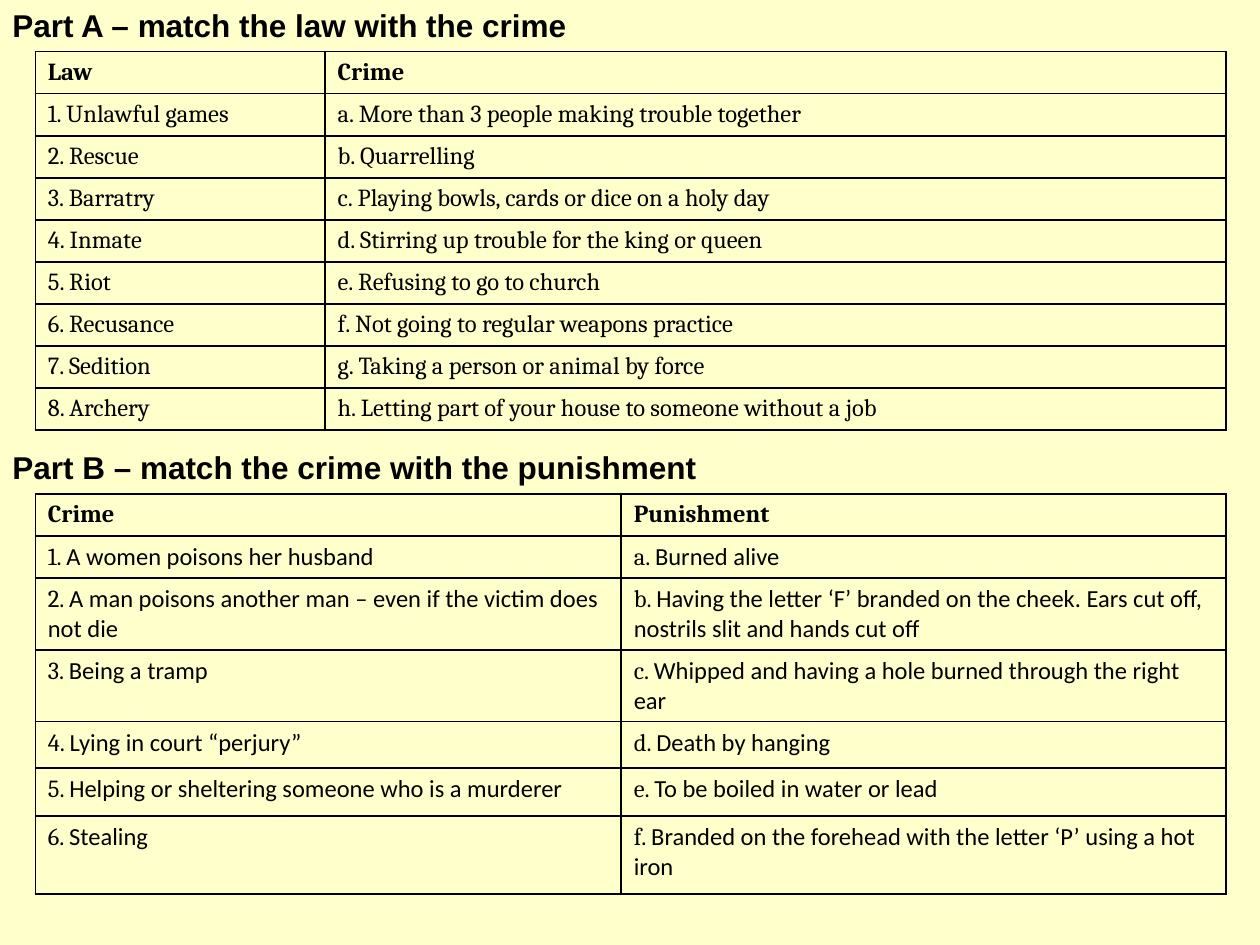
import pptx
import pptx.util
import pptx.dml.color
import pptx.oxml.ns
import lxml.etree
from pptx.util import Inches, Pt

COLORS = {"page": "FFFFCC", "ink": "000000"}

PARTS = [
    {
        "title": "Part A – match the law with the crime",
        "title_top": 0,
        "table_top": 0.41,
        "body_font": "Cambria",
        "columns": [2.3, 7.15],
        "rows": [3 / 9] * 9,
        "header": ("Law", "Crime"),
        "pairs": [
            ("Unlawful games", "More than 3 people making trouble together"),
            ("Rescue", "Quarrelling"),
            ("Barratry", "Playing bowls, cards or dice on a holy day"),
            ("Inmate", "Stirring up trouble for the king or queen"),
            ("Riot", "Refusing to go to church"),
            ("Recusance", "Not going to regular weapons practice"),
            ("Sedition", "Taking a person or animal by force"),
            ("Archery", "Letting part of your house to someone without a job"),
        ],
    },
    {
        "title": "Part B – match the crime with the punishment",
        "title_top": 3.51,
        "table_top": 3.92,
        "body_font": "Calibri",
        "columns": [4.65, 4.8],
        "rows": [0.33, 0.33, 0.57, 0.57, 0.37, 0.38, 0.62],
        "header": ("Crime", "Punishment"),
        "pairs": [
            ("A women poisons her husband", "Burned alive"),
            ("A man poisons another man – even if the victim does not die",
             "Having the letter ‘F’ branded on the cheek. Ears cut off, nostrils slit and hands cut off"),
            ("Being a tramp", "Whipped and having a hole burned through the right ear"),
            ("Lying in court “perjury”", "Death by hanging"),
            ("Helping or sheltering someone who is a murderer", "To be boiled in water or lead"),
            ("Stealing", "Branded on the forehead with the letter ‘P’ using a hot iron"),
        ],
    },
]


def rgb(name):
    return pptx.dml.color.RGBColor.from_string(COLORS[name])


def add_span(para, text, font, size, bold=False):
    span = para.add_run()
    span.text = text
    span.font.name = font
    span.font.size = Pt(size)
    span.font.bold = bold
    span.font.color.rgb = rgb("ink")


def add_borders(cell):
    properties = cell._tc.get_or_add_tcPr()
    qn = pptx.oxml.ns.qn
    for side in ("a:lnL", "a:lnR", "a:lnT", "a:lnB"):
        line = lxml.etree.SubElement(properties, qn(side), w=str(Pt(1)))
        fill = lxml.etree.SubElement(line, qn("a:solidFill"))
        lxml.etree.SubElement(fill, qn("a:srgbClr"), val=COLORS["ink"])


def add_title(page, part):
    box = page.shapes.add_textbox(0, Inches(part["title_top"]), Inches(5.67), Inches(0.4))
    box.text_frame.word_wrap = True
    box.text_frame.auto_size = pptx.enum.text.MSO_AUTO_SIZE.SHAPE_TO_FIT_TEXT
    add_span(box.text_frame.paragraphs[0], part["title"], "Arial", 18, True)


def add_matching_table(page, part):
    columns, rows = part["columns"], part["rows"]
    frame = page.shapes.add_table(
        len(rows), len(columns), Inches(0.28), Inches(part["table_top"]),
        Inches(sum(columns)), Inches(sum(rows)))
    table = frame.table
    table.first_row = table.horz_banding = False
    for column, width in zip(table.columns, columns):
        column.width = Inches(width)
    for row, height in zip(table.rows, rows):
        row.height = Inches(height)
    for number, texts in enumerate([part["header"], *part["pairs"]]):
        labels = (f"{number}. ", f"{chr(ord('a') + number - 1)}. ")
        for cell, label, text in zip(table.rows[number].cells, labels, texts):
            add_borders(cell)
            cell.fill.background()
            para = cell.text_frame.paragraphs[0]
            if number == 0:
                add_span(para, text, "Cambria", 14, True)
            else:
                add_span(para, label, "Cambria", 14)
                add_span(para, text, part["body_font"], 14)


def main():
    deck = pptx.Presentation()
    deck.slide_width, deck.slide_height = Inches(10), Inches(7.5)
    page = deck.slides.add_slide(deck.slide_layouts[6])
    page.background.fill.solid()
    page.background.fill.fore_color.rgb = rgb("page")
    for part in PARTS:
        add_title(page, part)
        add_matching_table(page, part)
    deck.save("out.pptx")


if __name__ == "__main__":
    main()
